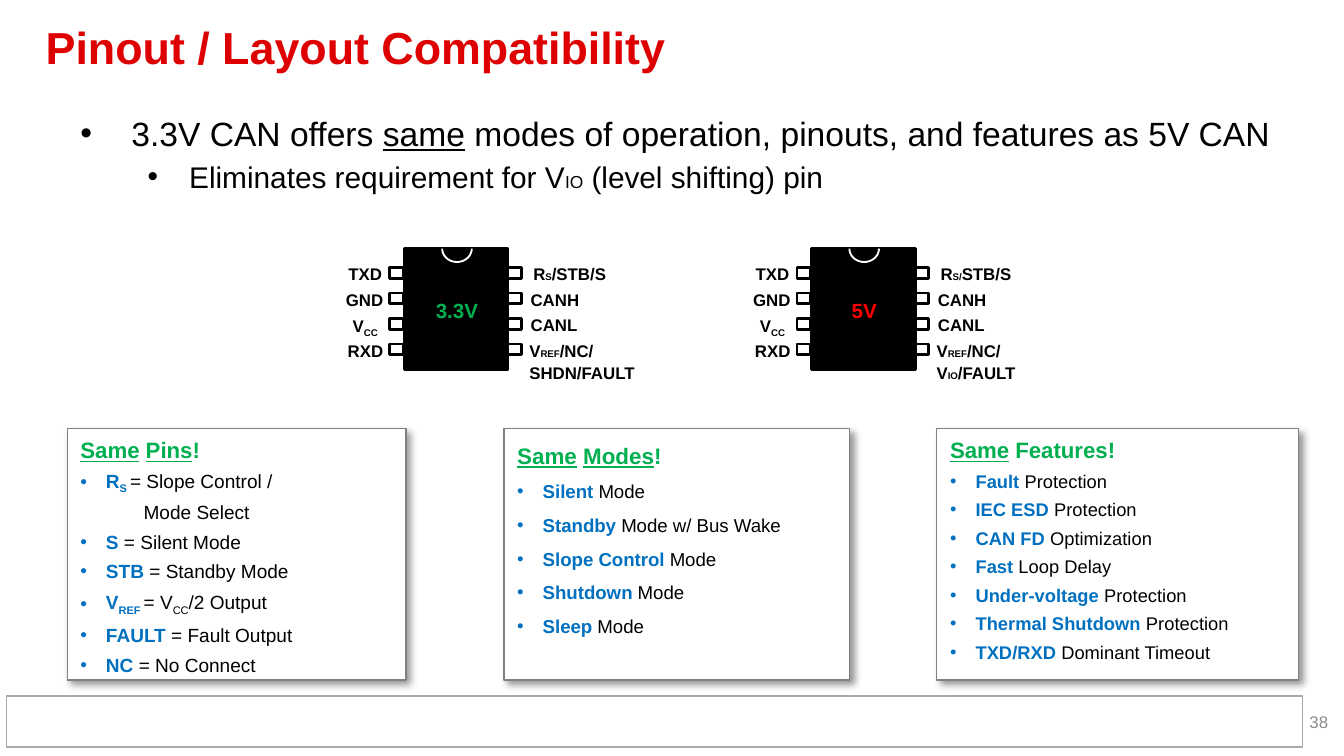
from dataclasses import dataclass, replace
from math import cos, pi, sin

from pptx import Presentation
from pptx.dml.color import RGBColor
from pptx.enum.shapes import MSO_SHAPE
from pptx.enum.text import MSO_ANCHOR, MSO_AUTO_SIZE, PP_ALIGN
from pptx.oxml import parse_xml
from pptx.oxml.ns import nsdecls
from pptx.util import Inches, Pt

BLACK = RGBColor(0x00, 0x00, 0x00)
WHITE = RGBColor(0xFF, 0xFF, 0xFF)
TITLE_RED = RGBColor(0xDE, 0x00, 0x00)
RED = RGBColor(0xFF, 0x00, 0x00)
GREEN = RGBColor(0x00, 0xB0, 0x50)
BLUE = RGBColor(0x00, 0x70, 0xC0)
GRAY = RGBColor(0x80, 0x80, 0x80)
FOOTER_GRAY = RGBColor(0xAA, 0xAA, 0xAA)
NUMBER_GRAY = RGBColor(0x8C, 0x8C, 0x8C)


@dataclass(frozen=True)
class Style:
    """Look of one span; baseline is in percent."""

    color: RGBColor = BLACK
    bold: bool = False
    underline: bool = False
    baseline: int = 0


PLAIN = Style()
PLAIN_LINE = replace(PLAIN, underline=True)
PLAIN_SUB = replace(PLAIN, baseline=-25)
PLAIN_SMALL = replace(PLAIN, baseline=-1)
PIN = Style(bold=True)
PIN_SUB = replace(PIN, baseline=-25)
PIN_SMALL = replace(PIN, baseline=-1)
HEAD = Style(GREEN, bold=True)
HEAD_LINE = replace(HEAD, underline=True)
KEY = Style(BLUE, bold=True)
KEY_SUB = replace(KEY, baseline=-25)

LEFT_PINS = [
    ([("TXD", PIN)], 0.07, 0.45),
    ([("GND", PIN)], 0.06, 0.48),
    ([("V", PIN), ("CC", PIN_SUB)], 0.1, 0.41),
    ([("RXD", PIN)], 0.06, 0.47),
]
REFERENCE = [("V", PIN), ("REF", PIN_SMALL), ("/NC/", PIN)]
CHIPS = [
    (3.01, "3.3V", GREEN, [("R", PIN), ("S", PIN_SMALL), ("/STB/S", PIN)],
     [("SHDN/FAULT", PIN)], 1.02),
    (6.04, "5V", RED, [("R", PIN), ("S/", PIN_SMALL), ("STB/S", PIN)],
     [("V", PIN), ("IO", PIN_SMALL), ("/FAULT", PIN)], 0.82),
]
PIN_PITCH = 0.19


def entry(key, text):
    """Return the spans of a blue key followed by plain text."""
    return [(key + " ", KEY), (text, PLAIN)]


def write(paragraph, spans, size, spacing=1.0, before=0, align=PP_ALIGN.LEFT, indent=None):
    """Fill a paragraph; indent is (left margin, hanging width) for a bullet."""
    if indent:
        margin, hang = indent
        properties = paragraph._p.get_or_add_pPr()
        properties.set("marL", str(Inches(margin)))
        properties.set("indent", str(-Inches(hang)))
        properties.append(parse_xml(f'<a:buFont {nsdecls("a")} typeface="Arial"/>'))
        properties.append(parse_xml(f'<a:buChar {nsdecls("a")} char="•"/>'))
    paragraph.alignment = align
    paragraph.line_spacing = spacing
    if before:
        paragraph.space_before = Pt(before)
    paragraph.font.name = "Arial"
    paragraph.font.size = Pt(size)
    for text, style in spans:
        span = paragraph.add_run()
        span.text = text
        span.font.color.rgb = style.color
        span.font.bold = style.bold
        span.font.underline = style.underline
        if style.baseline:
            span._r.get_or_add_rPr().set("baseline", str(style.baseline * 1000))


def add_text(shapes, left, top, width, height, lines, size, wrap=True, grow=False,
             anchor=MSO_ANCHOR.TOP, **options):
    """Add a text box with one paragraph for each list of spans."""
    box = shapes.add_textbox(Inches(left), Inches(top), Inches(width), Inches(height))
    frame = box.text_frame
    frame.word_wrap = wrap
    frame.vertical_anchor = anchor
    if grow:
        frame.auto_size = MSO_AUTO_SIZE.SHAPE_TO_FIT_TEXT
    for index, spans in enumerate(lines):
        paragraph = frame.add_paragraph() if index else frame.paragraphs[0]
        write(paragraph, spans, size, **options)
    return frame


def add_box(shapes, left, top, width, height, fill, line, weight):
    """Add a flat rectangle; a fill of None leaves it open."""
    box = shapes.add_shape(MSO_SHAPE.RECTANGLE, Inches(left), Inches(top),
                           Inches(width), Inches(height))
    box.shadow.inherit = False
    if fill is None:
        box.fill.background()
    else:
        box.fill.solid()
        box.fill.fore_color.rgb = fill
    box.line.color.rgb = line
    box.line.width = Pt(weight)
    return box


def add_notch(shapes, center, top):
    """Add the white half-round notch at the top of a chip."""
    points = [(Inches(center + 0.11 * cos(pi * step / 24)),
               Inches(top + 0.1 * sin(pi * step / 24))) for step in range(25)]
    builder = shapes.build_freeform(*points[0])
    builder.add_line_segments(points[1:], close=False)
    notch = builder.convert_to_shape()
    notch.shadow.inherit = False
    notch.fill.background()
    notch.line.color.rgb = WHITE
    notch.line.width = Pt(1)


def add_chip(page, left, name, color, mode_pin, fault_pin, fault_width):
    """Add a chip with its pins and pin labels."""
    shapes = page.shapes.add_group_shape().shapes
    add_box(shapes, left, 1.85, 0.77, 0.9, BLACK, BLACK, 1.5)
    for pin_left in (left - 0.11, left + 0.77):
        for row in range(4):
            add_box(shapes, pin_left, 1.99 + row * PIN_PITCH, 0.1, 0.08, None, BLACK, 1.5)
    add_notch(shapes, left + 0.39, 1.85)
    add_text(shapes, left + 0.13, 2.17, 0.52, 0.23, [[(name, Style(color, True))]], 11,
             align=PP_ALIGN.CENTER)

    label = {"size": 9, "wrap": False, "grow": True, "spacing": 1.1}
    for row, (spans, gap, width) in enumerate(LEFT_PINS):
        add_text(page.shapes, left - gap - width, 1.9 + row * PIN_PITCH, width, 0.25,
                 [spans], align=PP_ALIGN.RIGHT, **label)
    right_pins = [([mode_pin], 0.86, 0.74), ([[("CANH", PIN)]], 0.84, 0.57),
                  ([[("CANL", PIN)]], 0.84, 0.55), ([REFERENCE, fault_pin], 0.83, fault_width)]
    for row, (lines, offset, width) in enumerate(right_pins):
        add_text(page.shapes, left + offset, 1.9 + row * PIN_PITCH, width,
                 0.25 if len(lines) == 1 else 0.43, lines, **label)


def add_card(page, left, width, heading, size, spacing):
    """Add a shadowed card with its heading and return its text frame."""
    card = add_box(page.shapes, left, 3.19, width, 1.87, WHITE, GRAY, 0.75)
    card._element.spPr.find("{*}effectLst").append(parse_xml(
        f'<a:outerShdw {nsdecls("a")} blurRad="{Pt(4)}" dist="{Pt(3)}" dir="2700000" '
        'algn="tl" rotWithShape="0"><a:srgbClr val="000000"><a:alpha val="40000"/>'
        '</a:srgbClr></a:outerShdw>'))
    frame = card.text_frame
    frame.word_wrap = True
    frame.vertical_anchor = MSO_ANCHOR.TOP
    frame.margin_top = 0
    write(frame.paragraphs[0], heading, size, spacing)
    return frame


def add_entries(frame, entries, size, spacing, before=0):
    """Add bulleted entries to a card."""
    for spans in entries:
        write(frame.add_paragraph(), spans, size, spacing, before, indent=(0.19, 0.19))


def main():
    """Build the slide and save it."""
    deck = Presentation()
    deck.slide_width = Inches(10)
    deck.slide_height = deck.slide_width * 9 // 16
    page = deck.slides.add_slide(deck.slide_layouts[5])
    add_box(page.shapes, 0.05, 5.18, 9.64, 0.38, WHITE, FOOTER_GRAY, 0.75)

    title = page.shapes.title
    title.left, title.top, title.width, title.height = map(Inches, (0.24, 0.06, 9.76, 0.63))
    title.text_frame.vertical_anchor = MSO_ANCHOR.MIDDLE
    write(title.text_frame.paragraphs[0],
          [("Pinout / Layout Compatibility", Style(TITLE_RED, True))], 24, 0.85)

    intro = add_text(page.shapes, 0.5, 0.79, 9.17, 0.72, [[
        ("3.3V CAN offers ", PLAIN), ("same", PLAIN_LINE),
        (" modes of operation, pinouts, and features as 5V CAN", PLAIN)]], 18,
        grow=True, indent=(0.38, 0.38))
    detail = intro.add_paragraph()
    detail.level = 1
    write(detail, [("Eliminates requirement for V", PLAIN), ("IO", PLAIN_SMALL),
                   (" (level shifting) pin", PLAIN)], 16, before=3, indent=(0.81, 0.31))

    for chip in CHIPS:
        add_chip(page, *chip)

    pins = add_card(page, 0.5, 2.52, [("Same", HEAD_LINE), (" ", HEAD), ("Pins", HEAD_LINE),
                                      ("!", HEAD)], 11.9, 1.3)
    add_entries(pins, [[("R", KEY), ("S ", KEY_SUB), ("= Slope Control /", PLAIN)]],
                10.2, 1.0, 3)
    follow = pins.add_paragraph()
    follow._p.get_or_add_pPr().set("marL", str(Inches(0.47)))
    write(follow, [("Mode Select", PLAIN)], 10.2, 1.0, 3)
    add_entries(pins, [
        entry("S", "= Silent Mode"), entry("STB", "= Standby Mode"),
        [("V", KEY), ("REF ", KEY_SUB), ("= V", PLAIN), ("CC", PLAIN_SUB), ("/2 Output", PLAIN)],
        entry("FAULT", "= Fault Output"), entry("NC", "= No Connect")], 10.2, 1.3)

    modes = add_card(page, 3.75, 2.57, [("Same", HEAD_LINE), (" ", HEAD), ("Modes", HEAD_LINE),
                                        ("!", HEAD)], 12, 1.5)
    add_entries(modes, [
        entry("Silent", "Mode"), entry("Standby", "Mode w/ Bus Wake"),
        entry("Slope Control", "Mode"), entry("Shutdown", "Mode"), entry("Sleep", "Mode")], 10, 1.5)

    features = add_card(page, 6.97, 2.69, [("Same", HEAD_LINE), (" Features!", HEAD)], 11.9, 1.3)
    add_entries(features, [
        entry("Fault", "Protection"), entry("IEC ESD", "Protection"),
        entry("CAN FD", "Optimization"), entry("Fast", "Loop Delay"),
        entry("Under-voltage", "Protection"), entry("Thermal Shutdown", "Protection"),
        entry("TXD/RXD", "Dominant Timeout")], 9.8, 1.3)

    add_text(page.shapes, 9.6, 5.22, 0.38, 0.3, [[("38", Style(NUMBER_GRAY))]], 9,
             anchor=MSO_ANCHOR.MIDDLE, align=PP_ALIGN.RIGHT)
    deck.save("out.pptx")


if __name__ == "__main__":
    main()
